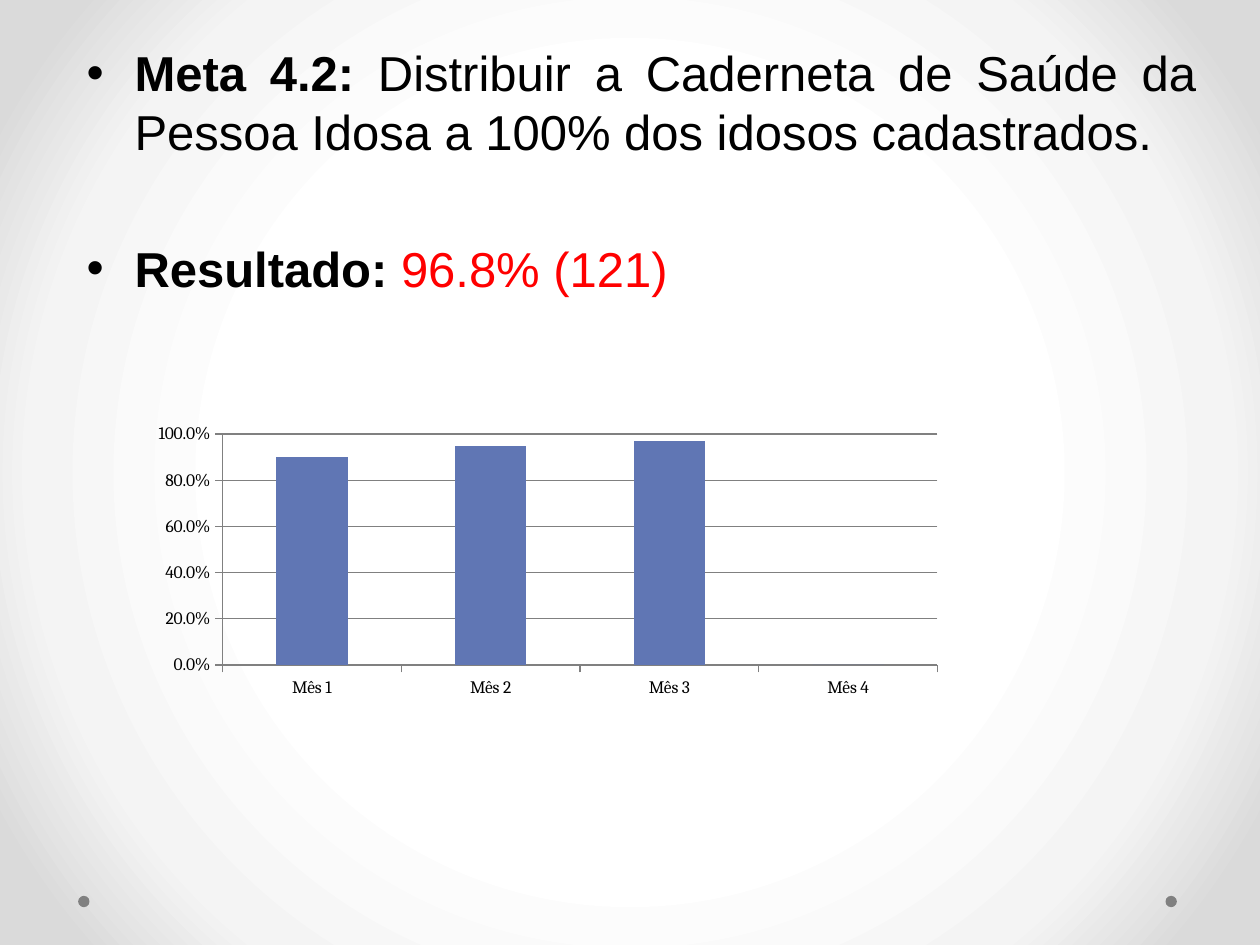
from pptx import Presentation
from pptx.chart.data import CategoryChartData
from pptx.dml.color import RGBColor
from pptx.enum.chart import XL_CHART_TYPE as ChartType, XL_TICK_MARK as TickMark
from pptx.enum.shapes import MSO_SHAPE as Shape
from pptx.enum.text import PP_ALIGN as Align
from pptx.oxml import parse_xml
from pptx.oxml.ns import nsdecls
from pptx.util import Inches, Pt

BLACK = RGBColor(0x00, 0x00, 0x00)
RED = RGBColor(0xFF, 0x00, 0x00)
GRAY = RGBColor(0x80, 0x80, 0x80)
BLUE = RGBColor(0x60, 0x76, 0xB4)
BACKGROUND_STOPS = [(50, "FFFFFF"), (76, "F4F4F4"), (92, "DADADA")]
MONTHLY_SHARES = {"Mês 1": 0.9, "Mês 2": 0.95, "Mês 3": 0.97, "Mês 4": 0}


def set_background(slide):
    """Fill the slide with a circular gradient, light in the middle."""
    stops = "".join(
        f'<a:gs pos="{position * 1000}"><a:srgbClr val="{color}"/></a:gs>'
        for position, color in BACKGROUND_STOPS
    )
    background = parse_xml(
        f'<p:bg {nsdecls("p", "a")}><p:bgPr><a:gradFill rotWithShape="1">'
        f'<a:gsLst>{stops}</a:gsLst><a:path path="circle">'
        '<a:fillToRect l="50000" t="50000" r="50000" b="50000"/></a:path>'
        '</a:gradFill><a:effectLst/></p:bgPr></p:bg>'
    )
    slide.element.cSld.insert(0, background)


def add_dot(slide, left, top, size):
    """Draw one small decorative dot."""
    dot = slide.shapes.add_shape(Shape.OVAL, left, top, size, size)
    dot.shadow.inherit = False
    dot.fill.solid()
    dot.fill.fore_color.rgb = GRAY
    dot.line.fill.background()


def add_text(paragraph, text, color=BLACK, bold=False, size=28, font="Arial"):
    """Append a formatted run to a paragraph."""
    run = paragraph.add_run()
    run.text = text
    run.font.name = font
    run.font.size = Pt(size)
    run.font.bold = bold
    run.font.color.rgb = color


def format_bullet(paragraph, align=Align.LEFT, space_before=0):
    """Give a paragraph its bullet, hanging indent and spacing."""
    paragraph.alignment = align
    paragraph.space_before = Pt(space_before)
    properties = paragraph._p.get_or_add_pPr()
    indent = Inches(0.38)
    properties.set("marL", str(indent))
    properties.set("indent", str(-indent))
    properties.append(parse_xml(f'<a:buFont {nsdecls("a")} typeface="Arial"/>'))
    properties.append(parse_xml(f'<a:buChar {nsdecls("a")} char="•"/>'))


def add_goal(slide, left, top, width, height):
    """Write the goal and its result as two bullets."""
    frame = slide.shapes.add_textbox(left, top, width, height).text_frame
    frame.word_wrap = True
    goal = frame.paragraphs[0]
    format_bullet(goal, align=Align.JUSTIFY)
    add_text(goal, "Meta 4.2:", bold=True)
    add_text(goal, " Distribuir a Caderneta de Saúde da Pessoa Idosa "
                   "a 100% dos idosos cadastrados.")
    result = frame.add_paragraph()
    format_bullet(result, space_before=44.5)
    add_text(result, "Resultado: ", bold=True)
    add_text(result, "96.8% (121)", color=RED)


def set_plot_layout(chart, x, y, width, height):
    """Fix the inner plot area as fractions of the chart."""
    sizes = "".join(
        f'<c:{name} val="{value}"/>'
        for name, value in zip("xywh", (x, y, width, height))
    )
    layout = parse_xml(
        f'<c:layout {nsdecls("c")}><c:manualLayout><c:layoutTarget val="inner"/>'
        f'<c:xMode val="edge"/><c:yMode val="edge"/>{sizes}'
        '</c:manualLayout></c:layout>'
    )
    plot_area = chart._chartSpace.chart.plotArea
    for old_layout in plot_area.findall(layout.tag):
        plot_area.remove(old_layout)
    plot_area.insert(0, layout)


def add_monthly_chart(slide, left, top, width, height):
    """Chart the share of older people reached in each month."""
    data = CategoryChartData(number_format="0.0%")
    data.categories = list(MONTHLY_SHARES)
    data.add_series("Series 1", list(MONTHLY_SHARES.values()))
    chart = slide.shapes.add_chart(
        ChartType.COLUMN_CLUSTERED, left, top, width, height, data
    ).chart
    chart.has_legend = False
    chart.has_title = False
    chart.font.name = "Cambria"
    chart.font.size = Pt(10)
    chart.font.color.rgb = BLACK
    set_plot_layout(chart, 0.127, 0.276, 0.842, 0.53)

    plot = chart.plots[0]
    plot.gap_width = 150
    plot.vary_by_categories = False
    fill = plot.series[0].format.fill
    fill.solid()
    fill.fore_color.rgb = BLUE

    value_axis = chart.value_axis
    value_axis.minimum_scale = 0
    value_axis.maximum_scale = 1
    value_axis.major_unit = 0.2
    value_axis.has_major_gridlines = True
    value_axis.tick_labels.number_format = "0.0%"
    value_axis.tick_labels.number_format_is_linked = False
    for axis in (chart.category_axis, value_axis):
        axis.major_tick_mark = TickMark.OUTSIDE
        axis.minor_tick_mark = TickMark.NONE
    for lines in (chart.category_axis, value_axis, value_axis.major_gridlines):
        lines.format.line.color.rgb = GRAY
        lines.format.line.width = Pt(0.75)


def main():
    """Build the slide and save it."""
    presentation = Presentation()
    presentation.slide_width = Inches(10)
    presentation.slide_height = Inches(7.5)
    slide = presentation.slides.add_slide(presentation.slide_layouts[6])
    set_background(slide)
    for left in (9.25, 0.62):
        add_dot(slide, Inches(left), Inches(7.11), Inches(0.09))
    add_goal(slide, Inches(0.59), Inches(0.29), Inches(9), Inches(6.61))
    add_monthly_chart(slide, Inches(0.91), Inches(2.49), Inches(6.74), Inches(3.46))
    presentation.save("out.pptx")


if __name__ == "__main__":
    main()
